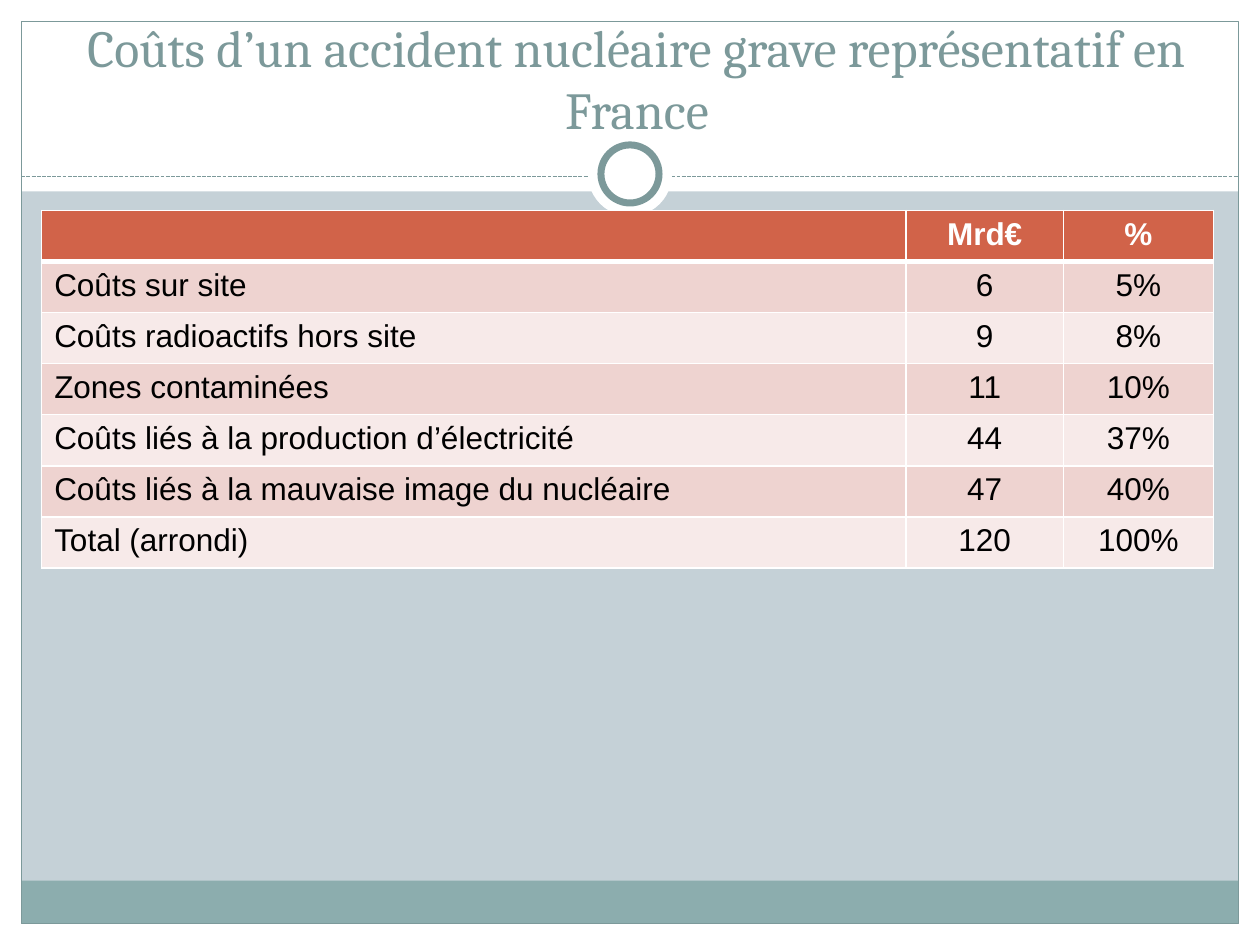
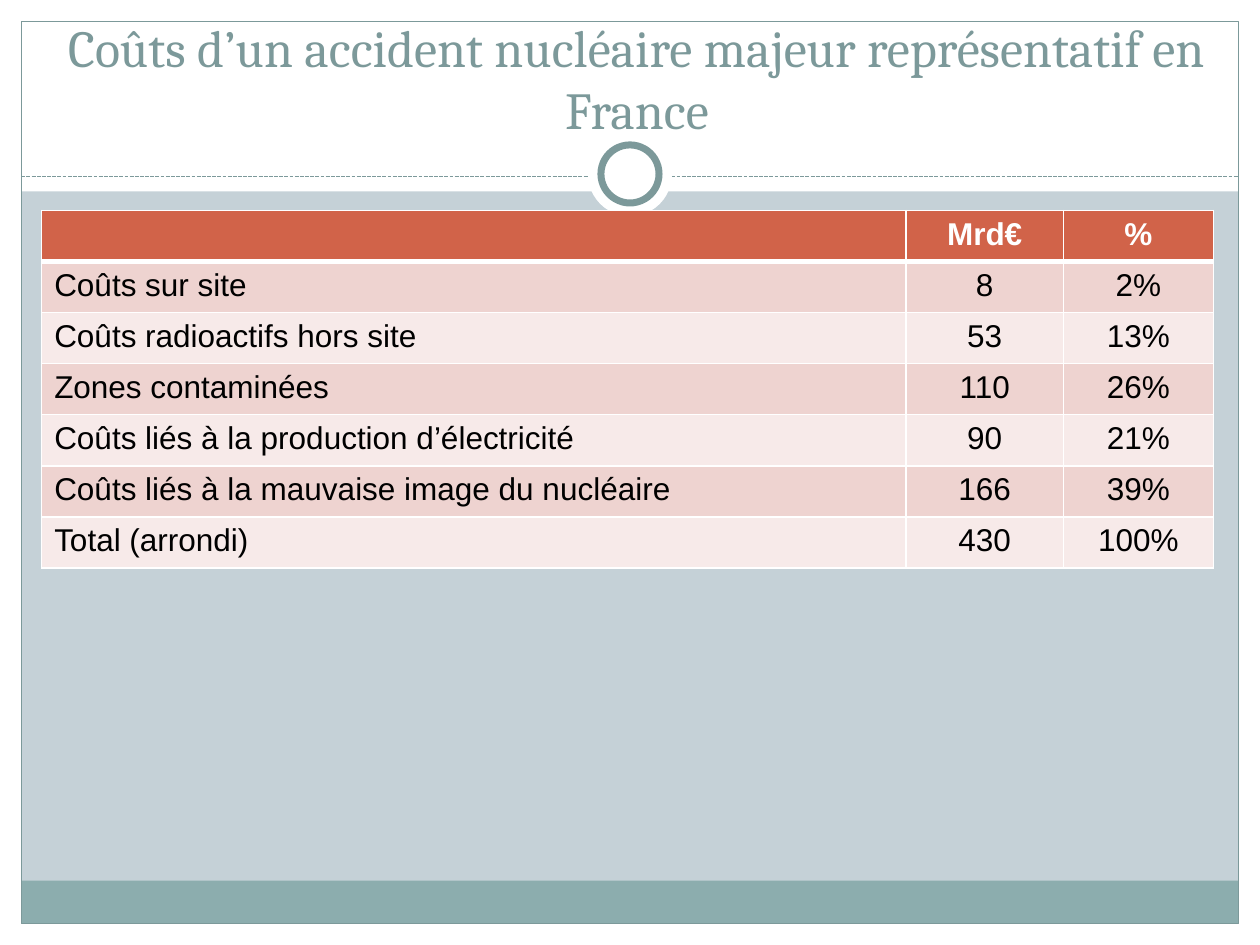
"""Build two slides on the costs of a nuclear accident in France."""
from dataclasses import dataclass
from typing import Any, NamedTuple

from lxml import etree
from pptx import Presentation, util as u
from pptx.dml.color import RGBColor
from pptx.enum import dml, shapes, text
from pptx.oxml import ns

Pt = u.Pt
RECT, OVAL = shapes.MSO_SHAPE.RECTANGLE, shapes.MSO_SHAPE.OVAL
LEFT, MID = text.PP_ALIGN.LEFT, text.PP_ALIGN.CENTER


@dataclass(frozen=True)
class Theme:
    back: str = "C5D1D7"
    white: str = "FFFFFF"
    black: str = "000000"
    foot: str = "8CADAE"
    line: str = "7C999A"
    head: str = "D16349"
    odd: str = "EED3D0"
    even: str = "F7EAE9"
    title_font: str = "Cambria"
    body_font: str = "Arial"
    title_size: float = 29.7
    body_size: float = 18
    thin: float = 0.75
    ring: float = 4
    grid: float = 1
    rule: float = 3


class Box(NamedTuple):
    left: float
    top: float
    width: float
    height: float


class Part(NamedTuple):
    kind: Any
    box: Box
    fill: str | None = None
    line: str | None = None
    width: float = 0


class Topic(NamedTuple):
    title: str
    costs: list[str]
    shares: list[str]


T = Theme()
WIDE, HIGH, EDGE = 720, 540, 12.2
INNER = WIDE - 2 * EDGE
RULE_Y = 100.8

FRAME = [
    Part(RECT, Box(0, HIGH - EDGE, WIDE, EDGE), T.white),
    Part(RECT, Box(0, 0, WIDE, 109.4), T.white),
    Part(RECT, Box(0, 0, EDGE, HIGH), T.white),
    Part(RECT, Box(WIDE - EDGE, 0, EDGE, HIGH), T.white),
    Part(RECT, Box(EDGE, 503.3, INNER, 24.5), T.foot),
    Part(RECT, Box(EDGE, EDGE, INNER, HIGH - 2 * EDGE), None, T.line, T.thin),
]
BADGE = [
    Part(OVAL, Box(336, 75.6, 48, 48), T.white),
    Part(OVAL, Box(343.4, 82.8, 33.2, 33.2), T.white, T.line, T.ring),
]
TITLE = Box(28, 0, 672, 83.5)
TABLE = Box(23.8, 120.2, 669.6, 204.4)
COLS = [493.9, 90, 85.7]
HEADS = ["", "Mrd€", "%"]
ITEMS = [
    "Coûts sur site",
    "Coûts radioactifs hors site",
    "Zones contaminées",
    "Coûts liés à la production d’électricité",
    "Coûts liés à la mauvaise image du nucléaire",
    "Total (arrondi)",
]
TOPICS = [
    Topic("Coûts d’un accident nucléaire grave représentatif en France",
          ["6", "9", "11", "44", "47", "120"],
          ["5%", "8%", "10%", "37%", "40%", "100%"]),
    Topic("Coûts d’un accident nucléaire majeur représentatif en France",
          ["8", "53", "110", "90", "166", "430"],
          ["2%", "13%", "26%", "21%", "39%", "100%"]),
]


def place(box: Box) -> list[u.Length]:
    return [Pt(n) for n in box]


def apply(item: Any, **values: Any) -> None:
    for name, value in values.items():
        setattr(item, name, value)


def paint(fill: Any, color: str | None) -> None:
    if color is None:
        fill.background()
    else:
        fill.solid()
        fill.fore_color.rgb = RGBColor.from_string(color)


def write(frame: Any, words: str, align: Any, color: str, **font: Any) -> None:
    para = frame.paragraphs[0]
    para.alignment = align
    if words:
        run = para.add_run()
        run.text = words
        apply(run.font, **font)
        run.font.color.rgb = RGBColor.from_string(color)


def draw(slide: Any, part: Part) -> None:
    shape = slide.shapes.add_shape(part.kind, *place(part.box))
    shape.shadow.inherit = False
    paint(shape.fill, part.fill)
    paint(shape.line.fill, part.line)
    if part.line:
        shape.line.width = Pt(part.width)


def add_rule(slide: Any) -> None:
    ends = [Pt(n) for n in (EDGE, RULE_Y, WIDE - EDGE, RULE_Y)]
    line = slide.shapes.add_connector(shapes.MSO_CONNECTOR.STRAIGHT, *ends)
    paint(line.line.fill, T.line)
    apply(line.line, width=Pt(T.thin), dash_style=dml.MSO_LINE.SQUARE_DOT)
    props = line._element.spPr
    props.find(ns.qn("a:ln")).find(ns.qn("a:prstDash")).set("val", "sysDash")
    etree.SubElement(props, ns.qn("a:effectLst"))


def add_title(slide: Any, words: str) -> None:
    frame = slide.shapes.add_textbox(*place(TITLE)).text_frame
    apply(frame, word_wrap=True, vertical_anchor=text.MSO_ANCHOR.BOTTOM)
    write(frame, words, MID, T.line, name=T.title_font, size=Pt(T.title_size))


def add_edges(cell: Any, row: int) -> None:
    wide = {"L": T.grid, "R": T.grid,
            "T": T.rule if row == 1 else T.grid,
            "B": T.rule if row == 0 else T.grid}
    props = cell._tc.get_or_add_tcPr()
    for side, width in wide.items():
        line = etree.SubElement(props, ns.qn(f"a:ln{side}"), w=str(Pt(width)))
        fill = etree.SubElement(line, ns.qn("a:solidFill"))
        etree.SubElement(fill, ns.qn("a:srgbClr"), val=T.white)


def add_costs(slide: Any, topic: Topic) -> None:
    rows = [HEADS, *zip(ITEMS, topic.costs, topic.shares)]
    table = slide.shapes.add_table(len(rows), len(COLS), *place(TABLE)).table
    for col, width in zip(table.columns, COLS):
        col.width = Pt(width)
    for r, row in enumerate(rows):
        table.rows[r].height = Pt(TABLE.height / len(rows))
        head = r == 0
        fill = T.head if head else T.odd if r % 2 else T.even
        for c, words in enumerate(row):
            cell = table.cell(r, c)
            add_edges(cell, r)
            paint(cell.fill, fill)
            write(cell.text_frame, words, MID if c else LEFT,
                  T.white if head else T.black,
                  name=T.body_font, size=Pt(T.body_size), bold=head)


def add_slide(deck: Any, topic: Topic) -> None:
    slide = deck.slides.add_slide(deck.slide_layouts[6])
    paint(slide.background.fill, T.back)
    for part in FRAME:
        draw(slide, part)
    add_rule(slide)
    for part in BADGE:
        draw(slide, part)
    add_title(slide, topic.title)
    add_costs(slide, topic)


def main() -> None:
    deck = Presentation()
    apply(deck, slide_width=Pt(WIDE), slide_height=Pt(HIGH))
    for topic in TOPICS:
        add_slide(deck, topic)
    deck.save("out.pptx")


if __name__ == "__main__":
    main()
